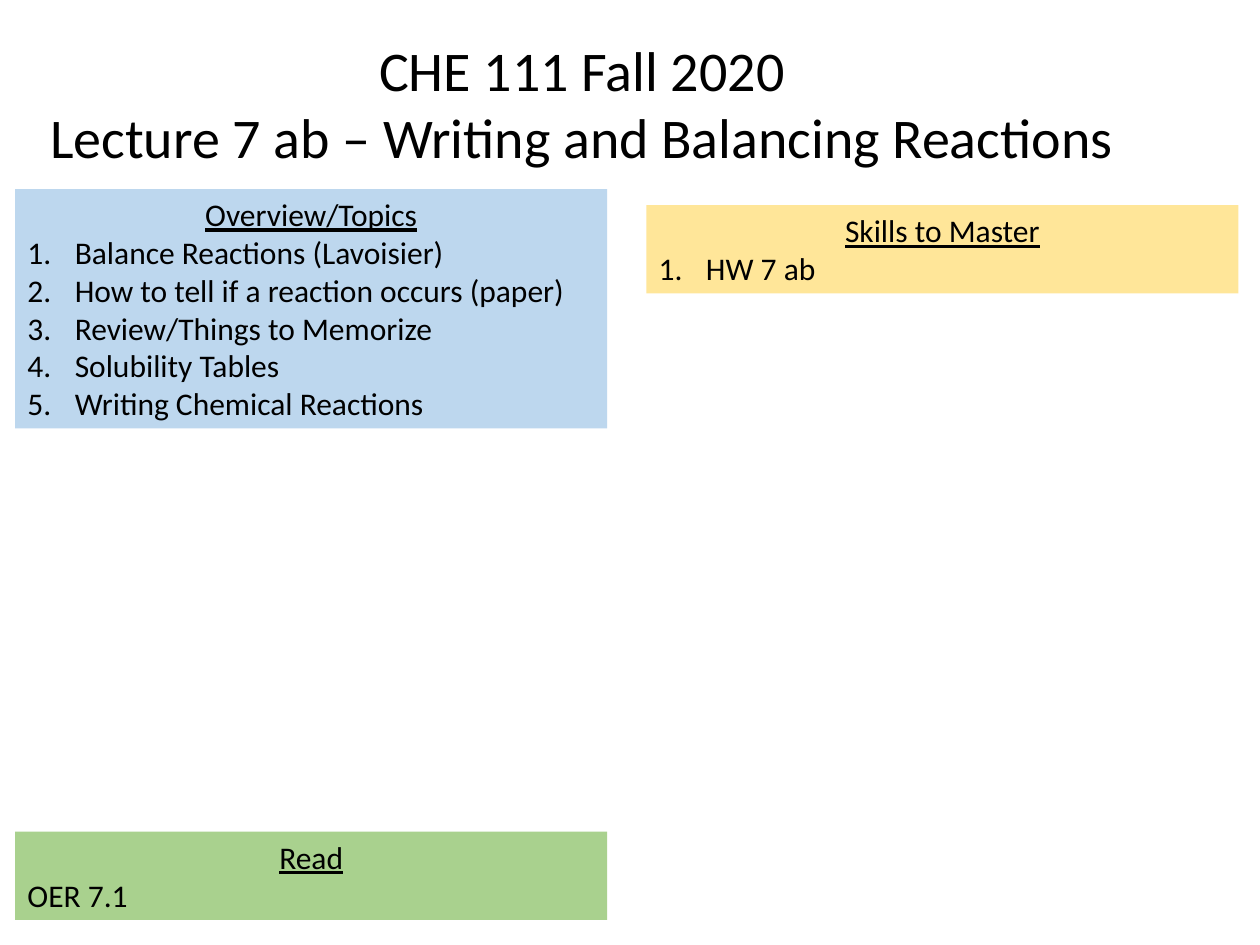
from dataclasses import dataclass

from lxml.etree import SubElement
from pptx import Presentation
from pptx.dml.color import RGBColor as Rgb
from pptx.enum.shapes import MSO_SHAPE as Kind
from pptx.enum.text import MSO_ANCHOR as Anchor, MSO_AUTO_SIZE as Fit, PP_ALIGN as Align
from pptx.oxml.ns import qn
from pptx.util import Emu, Inches, Pt

WIDE, HIGH = Inches(10), Inches(7.5)
FONT = "Calibri"
COLORS = {"ink": "000000", "blue": "BDD7EE", "gold": "FFE699", "green": "A9D18E"}

# Shares of the slide's width and height
COLS = (0.012, 0.513)
PANEL = 0.47
LINE = 0.04
PAD = 0.0135
INDENT = Inches(0.375)


@dataclass
class Panel:
    col: int
    top: float
    color: str
    head: str
    items: tuple[str, ...]
    listed: bool = True


PANELS = (
    Panel(0, 0.2, "blue", "Overview/Topics", (
        "Balance Reactions (Lavoisier)",
        "How to tell if a reaction occurs (paper)",
        "Review/Things to Memorize",
        "Solubility Tables",
        "Writing Chemical Reactions",
    )),
    Panel(1, 0.217, "gold", "Skills to Master", ("HW 7 ab",)),
    Panel(0, 0.88, "green", "Read", ("OER 7.1",), listed=False),
)
TITLE = ("CHE 111 Fall 2020", "Lecture 7 ab – Writing and Balancing Reactions")


def place(shape, left: float, top: float, width: float, height: float) -> None:
    """Set a shape's box from shares of the slide."""
    shape.left, shape.width = Emu(int(left * WIDE)), Emu(int(width * WIDE))
    shape.top, shape.height = Emu(int(top * HIGH)), Emu(int(height * HIGH))


def write(para, text: str, size: int, align: Align, under: bool = False) -> None:
    para.alignment = align
    run = para.add_run()
    run.text = text
    font = run.font
    font.name, font.size, font.underline = FONT, Pt(size), under
    font.color.rgb = Rgb.from_string(COLORS["ink"])


def number(para) -> None:
    """Turn a paragraph into a numbered list item."""
    props = para._p.get_or_add_pPr()
    props.set("marL", str(INDENT))
    props.set("indent", str(-INDENT))
    SubElement(props, qn("a:buFont"), typeface="+mj-lt")
    SubElement(props, qn("a:buAutoNum"), type="arabicPeriod")


def draw_title(slide) -> None:
    title = slide.shapes.title
    place(title, 0.025, 0.031, 0.874, 0.157)
    frame = title.text_frame
    frame.word_wrap = False
    frame.auto_size = Fit.NONE
    frame.vertical_anchor = Anchor.TOP
    for i, text in enumerate(TITLE):
        para = frame.add_paragraph() if i else frame.paragraphs[0]
        write(para, text, 32, Align.CENTER)


def draw_panel(slide, panel: Panel) -> None:
    shape = slide.shapes.add_shape(Kind.RECTANGLE, 0, 0, 0, 0)
    place(shape, COLS[panel.col], panel.top, PANEL,
          (1 + len(panel.items)) * LINE + PAD)
    shape.shadow.inherit = False
    shape.fill.solid()
    shape.fill.fore_color.rgb = Rgb.from_string(COLORS[panel.color])
    shape.line.fill.background()
    frame = shape.text_frame
    frame.word_wrap = True
    frame.auto_size = Fit.SHAPE_TO_FIT_TEXT
    frame.vertical_anchor = Anchor.TOP
    write(frame.paragraphs[0], panel.head, 18, Align.CENTER, under=True)
    for item in panel.items:
        para = frame.add_paragraph()
        write(para, item, 18, Align.LEFT)
        if panel.listed:
            number(para)


def main() -> None:
    deck = Presentation()
    deck.slide_width, deck.slide_height = WIDE, HIGH
    slide = deck.slides.add_slide(deck.slide_layouts[5])
    for panel in PANELS:
        draw_panel(slide, panel)
    draw_title(slide)
    deck.save("out.pptx")


if __name__ == "__main__":
    main()
